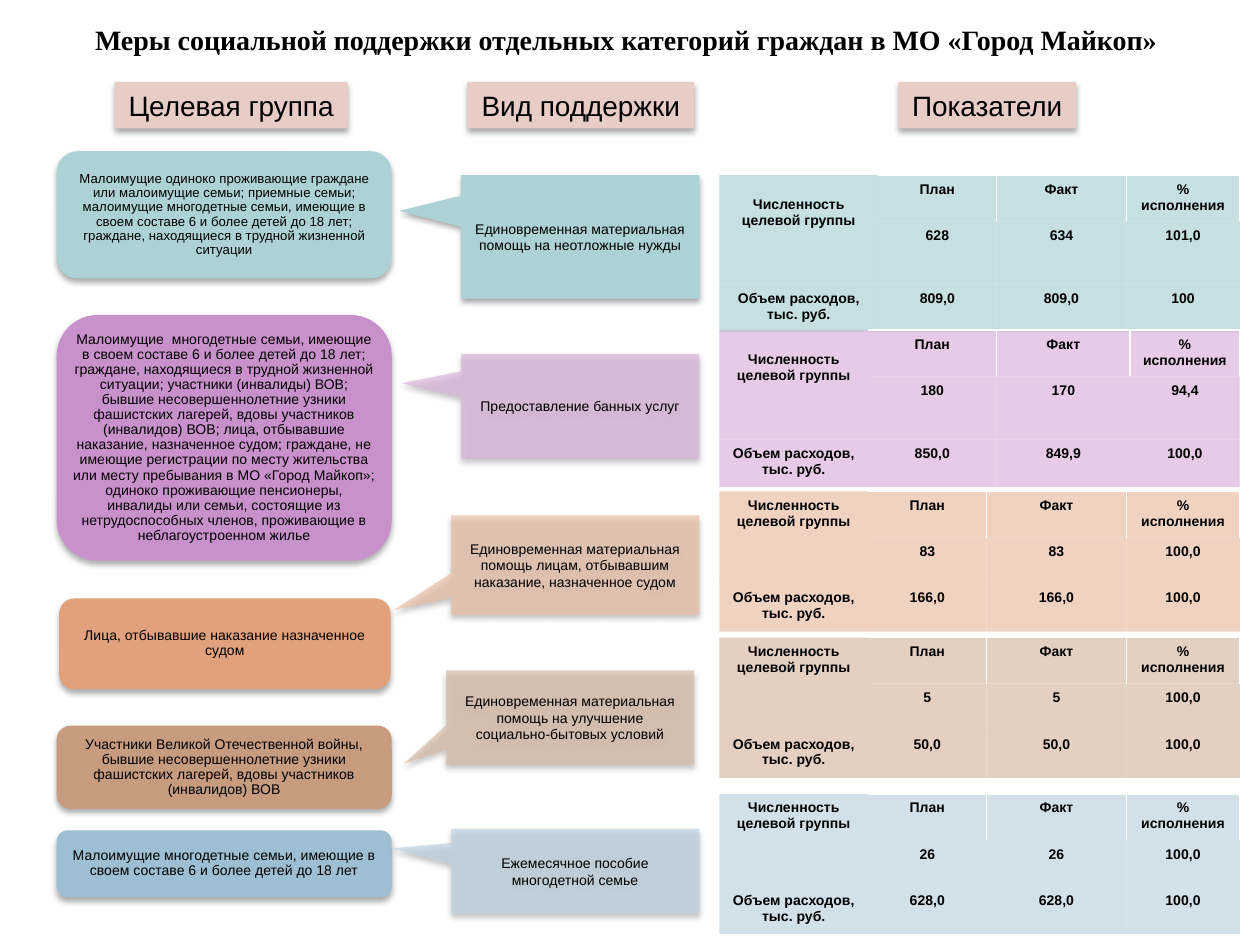
from dataclasses import dataclass

from lxml import etree
from pptx import Presentation
from pptx import util as u
from pptx.dml.color import RGBColor
from pptx.enum import shapes, text
from pptx.oxml import parse_xml
from pptx.oxml.ns import nsdecls, qn

# The slide is a grid of 100 columns by 75 rows of square modules.
COLUMNS, ROWS = 100, 75
MODULE = u.Inches(0.1)

BLACK = RGBColor(0x00, 0x00, 0x00)
HEADING = RGBColor(0xE7, 0xCD, 0xC6)
TEAL = RGBColor(0xAD, 0xD2, 0xD6)
PURPLE = RGBColor(0xC9, 0x91, 0xCB)
LILAC = RGBColor(0xDB, 0xB6, 0xDC)
ORANGE = RGBColor(0xE1, 0xA1, 0x7C)
PEACH = RGBColor(0xEB, 0xC0, 0xA7)
BROWN = RGBColor(0xC6, 0x9B, 0x7E)
BEIGE = RGBColor(0xD9, 0xBD, 0xA9)
BLUE = RGBColor(0x9D, 0xBE, 0xD3)
PALE_BLUE = RGBColor(0xBE, 0xD3, 0xE1)

TABLE_LEFT = 57.1
HEADER_ROW, SPENDING_ROW = 3.63, 3.8
NO_STYLE = "{2D5ABB26-0587-4C30-8999-92F81FD0307C}"
TRANSLUCENT = 70


@dataclass(frozen=True)
class Box:
    left: float
    top: float
    width: float
    height: float

    def emu(self) -> list[int]:
        return [round(v * MODULE) for v in (self.left, self.top, self.width, self.height)]


@dataclass(frozen=True)
class Indicators:
    top: float
    widths: tuple[float, ...]
    people: tuple[str, str, str]
    spending: tuple[str, str, str]
    people_row: float = HEADER_ROW
    label_drop: float = 0.5


@dataclass(frozen=True)
class Measure:
    group: str
    group_box: Box
    group_color: RGBColor
    support: str
    support_box: Box
    pointer: tuple[float, float]
    color: RGBColor
    indicators: Indicators
    group_size: float = 8
    support_alpha: int = TRANSLUCENT


NARROW = (11.8, 9.4, 11.1, 9)

HEADINGS = (
    ("Целевая группа", Box(9.1, 6.5, 18.5, 3.7)),
    ("Вид поддержки", Box(37.1, 6.5, 18, 3.7)),
    ("Показатели", Box(71.3, 6.5, 14.1, 3.7)),
)

MEASURES = (
    Measure(
        "Малоимущие одиноко проживающие граждане или малоимущие семьи; приемные семьи; "
        "малоимущие многодетные семьи, имеющие в своем составе 6 и более детей до 18 лет; "
        "граждане, находящиеся в трудной жизненной ситуации",
        Box(4.5, 12, 26.6, 10.1), TEAL,
        "Единовременная материальная помощь на неотложные нужды",
        Box(36.6, 13.9, 18.9, 9.8), (-0.76, -0.21), TEAL,
        Indicators(13.9, (12.6, 9.4, 10.3, 9), ("628", "634", "101,0"),
                   ("809,0", "809,0", "100"), 5, 1.75),
        group_size=7.5, support_alpha=100),
    Measure(
        "Малоимущие  многодетные семьи, имеющие в своем составе 6 и более детей до 18 лет; "
        "граждане, находящиеся в трудной жизненной ситуации; участники (инвалиды) ВОВ; "
        "бывшие несовершеннолетние узники фашистских лагерей, вдовы участников (инвалидов) "
        "ВОВ; лица, отбывавшие наказание, назначенное судом; граждане, не имеющие "
        "регистрации по месту жительства или месту пребывания в МО «Город Майкоп»; одиноко "
        "проживающие пенсионеры, инвалиды или семьи, состоящие из нетрудоспособных членов, "
        "проживающие в неблагоустроенном жилье",
        Box(4.5, 25, 26.6, 19.5), PURPLE,
        "Предоставление банных услуг",
        Box(36.6, 28.1, 18.9, 8.3), (-0.75, -0.22), LILAC,
        Indicators(26.2, (11.8, 10.2, 10.6, 8.7), ("180", "170", "94,4"),
                   ("850,0", "849,9", "100,0"), 5, 1.75)),
    Measure(
        "Лица, отбывавшие наказание назначенное судом",
        Box(4.7, 47.5, 26.3, 7.2), ORANGE,
        "Единовременная материальная помощь лицам, отбывавшим наказание, назначенное судом",
        Box(35.8, 40.9, 19.7, 7.9), (-0.73, 0.45), PEACH,
        Indicators(39, NARROW, ("83", "83", "100,0"), ("166,0", "166,0", "100,0"))),
    Measure(
        "Участники Великой Отечественной войны, бывшие несовершеннолетние узники "
        "фашистских лагерей, вдовы участников (инвалидов) ВОВ",
        Box(4.5, 57.6, 26.6, 6.6), BROWN,
        "Единовременная материальная помощь на улучшение социально-бытовых условий",
        Box(35.4, 53.2, 19.7, 7.5), (-0.67, 0.49), BEIGE,
        Indicators(50.6, NARROW, ("5", "5", "100,0"), ("50,0", "50,0", "100,0"))),
    Measure(
        "Малоимущие многодетные семьи, имеющие в своем составе 6 и более детей до 18 лет",
        Box(4.5, 65.9, 26.6, 5.3), BLUE,
        "Ежемесячное пособие многодетной семье",
        Box(35.8, 65.8, 19.7, 6.7), (-0.74, -0.27), PALE_BLUE,
        Indicators(63, NARROW, ("26", "26", "100,0"), ("628,0", "628,0", "100,0"))),
)


def write(frame, words: str, size: float, bold: bool = False,
          font: str = "Arial", spacing: float = 1.0) -> None:
    paragraph = frame.paragraphs[0]
    paragraph.text = words
    paragraph.alignment = text.PP_ALIGN.CENTER
    paragraph.line_spacing = spacing
    style = paragraph.runs[0].font
    for key, value in {"name": font, "size": u.Pt(size), "bold": bold}.items():
        setattr(style, key, value)
    style.color.rgb = BLACK


def paint(fill, properties, color: RGBColor, alpha: int) -> None:
    """Fill solidly; properties is the XML element that holds the fill."""
    fill.solid()
    fill.fore_color.rgb = color
    if alpha < 100:
        tint = properties.find(qn("a:solidFill"))[0]
        etree.SubElement(tint, qn("a:alpha"), val=str(alpha * 1000))


def draw_panel(slide, kind, box: Box, color: RGBColor, alpha: int = 100):
    """Add a borderless shape with a soft shadow below it."""
    panel = slide.shapes.add_shape(kind, *box.emu())
    paint(panel.fill, panel.element.spPr, color, alpha)
    panel.line.fill.background()
    panel.shadow.inherit = False
    panel.element.spPr.find(qn("a:effectLst")).append(parse_xml(
        f'<a:outerShdw {nsdecls("a")} blurRad="44450" dist="27940" dir="5400000" '
        'rotWithShape="0"><a:srgbClr val="000000"><a:alpha val="32000"/></a:srgbClr>'
        '</a:outerShdw>'))
    panel.text_frame.word_wrap = True
    panel.text_frame.vertical_anchor = text.MSO_ANCHOR.MIDDLE
    return panel


def draw_heading(slide, words: str, box: Box) -> None:
    frame = draw_panel(slide, shapes.MSO_SHAPE.RECTANGLE, box, HEADING).text_frame
    frame.word_wrap = False
    write(frame, words, 16)


def draw_group(slide, measure: Measure) -> None:
    frame = draw_panel(slide, shapes.MSO_SHAPE.ROUNDED_RECTANGLE,
                       measure.group_box, measure.group_color).text_frame
    margins = {"margin_left": 0.03, "margin_right": 0.03,
               "margin_top": 0.02, "margin_bottom": 0.02}
    for key, value in margins.items():
        setattr(frame, key, u.Inches(value))
    write(frame, measure.group, measure.group_size, spacing=0.9)


def draw_support(slide, measure: Measure) -> None:
    callout = draw_panel(slide, shapes.MSO_SHAPE.RECTANGULAR_CALLOUT, measure.support_box,
                         measure.color, measure.support_alpha)
    callout.adjustments[0], callout.adjustments[1] = measure.pointer
    write(callout.text_frame, measure.support, 8)


def add_white_borders(cell, sides: str) -> None:
    properties = cell._tc.get_or_add_tcPr()
    for place, side in enumerate(sides):
        properties.insert(place, parse_xml(
            f'<a:ln{side} {nsdecls("a")} w="12700"><a:solidFill>'
            f'<a:srgbClr val="FFFFFF"/></a:solidFill></a:ln{side}>'))


def draw_indicators(slide, data: Indicators, color: RGBColor) -> None:
    heights = (HEADER_ROW, data.people_row, SPENDING_ROW)
    box = Box(TABLE_LEFT, data.top, sum(data.widths), sum(heights))
    graphic = slide.shapes.add_table(len(heights), len(data.widths), *box.emu())
    table = graphic.table
    next(graphic.element.iter(qn("a:tableStyleId"))).text = NO_STYLE
    table.first_row = table.horz_banding = False
    for column, width in zip(table.columns, data.widths):
        column.width = round(width * MODULE)
    for row, height in zip(table.rows, heights):
        row.height = round(height * MODULE)

    table.cell(0, 0).merge(table.cell(1, 0))
    table.cell(0, 0).margin_top = round(data.label_drop * MODULE)
    content = (("Численность целевой группы", "План", "Факт", "% исполнения"),
               ("", *data.people),
               ("Объем расходов, тыс. руб.", *data.spending))
    for r, line in enumerate(content):
        for c, words in enumerate(line):
            cell = table.cell(r, c)
            paint(cell.fill, cell._tc.get_or_add_tcPr(), color, TRANSLUCENT)
            if words:
                write(cell.text_frame, words, 8, bold=True)
            if r == 0 and c > 0:
                add_white_borders(cell, "RT" if c == 1 else "LRT")


def main() -> None:
    deck = Presentation()
    deck.slide_width, deck.slide_height = COLUMNS * MODULE, ROWS * MODULE
    slide = deck.slides.add_slide(deck.slide_layouts[6])

    title = slide.shapes.add_textbox(*Box(5.1, 1.3, 89.2, 3.7).emu()).text_frame
    title.word_wrap = True
    write(title, "Меры социальной поддержки отдельных категорий граждан в МО «Город Майкоп»",
          16, bold=True, font="Times New Roman")
    for words, box in HEADINGS:
        draw_heading(slide, words, box)
    for measure in MEASURES:
        draw_group(slide, measure)
        draw_support(slide, measure)
        draw_indicators(slide, measure.indicators, measure.color)
    deck.save("out.pptx")


if __name__ == "__main__":
    main()
